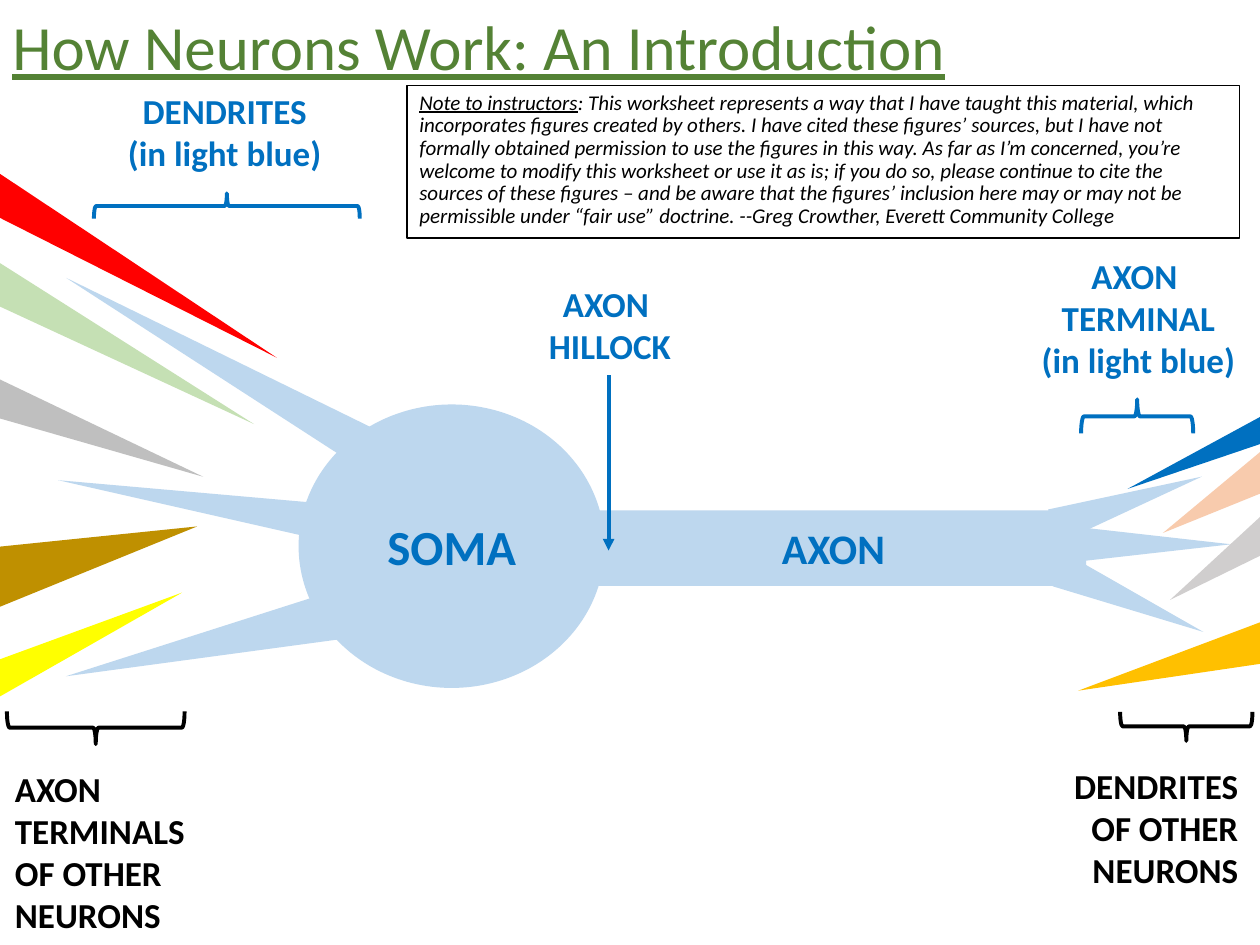
"""Build the worksheet slide that introduces the parts of a neuron."""
from lxml.etree import SubElement
from pptx import Presentation
from pptx.dml.color import RGBColor
from pptx.enum.shapes import MSO_CONNECTOR, MSO_SHAPE
from pptx.enum.text import MSO_ANCHOR, MSO_AUTO_SIZE, PP_ALIGN
from pptx.oxml.ns import qn
from pptx.util import Inches, Pt

SKY = RGBColor(0xBD, 0xD7, 0xEE)
BLUE = RGBColor(0x00, 0x70, 0xC0)
BLACK = RGBColor(0x00, 0x00, 0x00)
GREEN = RGBColor(0x54, 0x82, 0x35)
GOLD = RGBColor(0xFF, 0xC0, 0x00)
SILVER = RGBColor(0xD0, 0xCE, 0xCE)
PEACH = RGBColor(0xF8, 0xCB, 0xAD)
LIME = RGBColor(0xC5, 0xE0, 0xB4)
RED = RGBColor(0xFF, 0x00, 0x00)
GRAY = RGBColor(0xBF, 0xBF, 0xBF)
YELLOW = RGBColor(0xFF, 0xFF, 0x00)
BROWN = RGBColor(0xBF, 0x90, 0x00)
LEFT, MID, RIGHT = PP_ALIGN.LEFT, PP_ALIGN.CENTER, PP_ALIGN.RIGHT

deck = Presentation()
deck.slide_width, deck.slide_height = Inches(10), Inches(7.5)
COL, ROW = deck.slide_width / 100, deck.slide_height / 75
slide = deck.slides.add_slide(deck.slide_layouts[6])
shapes = slide.shapes


def draw(kind, box, turn=0, fill=None, line=None, width=2.25):
    x, y, w, h = box
    shape = shapes.add_shape(kind, int(x * COL), int(y * ROW), int(w * COL), int(h * ROW))
    shape.rotation = turn
    shape.shadow.inherit = False
    if fill is None:
        shape.fill.background()
    else:
        shape.fill.solid()
        shape.fill.fore_color.rgb = fill
    if line is None:
        shape.line.fill.background()
    else:
        shape.line.color.rgb = line
        shape.line.width = Pt(width)
    return shape


def write(para, text, size, color, bold=False, italic=False, under=False):
    run = para.add_run()
    run.text = text
    font = run.font
    font.name, font.size, font.color.rgb = "Calibri", Pt(size), color
    font.bold, font.italic, font.underline = bold, italic, under


bodies = [
    (MSO_SHAPE.OVAL, (23.7, 32.1, 24.3, 22.5), "SOMA", 28),
    (MSO_SHAPE.RECTANGLE, (46.1, 40.5, 40.1, 6), "AXON", 24),
]
for kind, box, name, size in bodies:
    frame = draw(kind, box, fill=SKY).text_frame
    frame.vertical_anchor = MSO_ANCHOR.MIDDLE
    para = frame.paragraphs[0]
    para.alignment = MID
    write(para, name, size, BLUE, bold=True)

spikes = [
    ((15.4, 15.2, 3.2, 27), 299.5, SKY),
    ((14.6, 39.4, 4.1, 23.4), 257.3, SKY),
    ((13.1, 29.7, 2.7, 19.9), 278.9, SKY),
    ((88.1, 33.6, 2.8, 12.4), 71.5, SKY),
    ((88.4, 41.5, 2.8, 12.4), 113.3, SKY),
    ((90.1, 37, 2.8, 12.4), 90, SKY),
    ((92.1, 44, 3.7, 17.3), 255.5, GOLD),
    ((94.7, 29, 2.4, 14), 246.4, BLUE),
    ((95.8, 39, 3.2, 11), 235.6, SILVER),
    ((95, 34.8, 3.1, 9.9), 239.1, PEACH),
    ((7.9, 15.7, 3.2, 24.3), 118.6, LIME),
    ((8.7, 8.1, 3.2, 27), 120.2, RED),
    ((5.6, 24.9, 3.2, 19.1), 110.8, GRAY),
    ((4.2, 41.5, 3.2, 19.1), 65.1, YELLOW),
    ((4.9, 35.3, 4.9, 17.1), 76, BROWN),
]
for box, turn, fill in spikes:
    draw(MSO_SHAPE.ISOSCELES_TRIANGLE, box, turn, fill)

braces = [
    ((88.9, 28.6, 2.7, 8.9), 90, BLUE),
    ((17, 5.8, 2, 21.1), 90, BLUE),
    ((93, 52.4, 2.3, 10.5), 270, BLACK),
    ((6.3, 50.7, 2.6, 14.1), 270, BLACK),
]
for box, turn, line in braces:
    draw(MSO_SHAPE.LEFT_BRACE, box, turn, line=line)

arrow = shapes.add_connector(
    MSO_CONNECTOR.STRAIGHT, int(48.3 * COL), int(29.8 * ROW), int(48.3 * COL), int(43.7 * ROW))
arrow.line.color.rgb = BLUE
arrow.line.width = Pt(2.25)
SubElement(arrow.line._get_or_add_ln(), qn("a:tailEnd"), type="triangle")
SubElement(arrow._element.spPr, qn("a:effectLst"))

labels = [
    ((81.6, 19.7, 17.5, 11.1), MID, BLUE, ["AXON ", "TERMINAL", "(in light blue)"]),
    ((84.1, 60.2, 15.8, 11.1), RIGHT, BLACK, ["DENDRITES ", "OF OTHER ", "NEURONS "]),
    ((9.1, 6.6, 18.1, 7.7), MID, BLUE, ["DENDRITES ", "(in light blue) "]),
    ((0.2, 60.4, 16.3, 14.5), LEFT, BLACK, ["AXON", "TERMINALS", "OF OTHER", "NEURONS"]),
    ((42.5, 21.9, 11.8, 7.7), MID, BLUE, ["AXON ", "HILLOCK"]),
    ((0, 0.1, 100, 7.1), LEFT, GREEN, ["How Neurons Work: An Introduction"]),
]
for (x, y, w, h), align, color, lines in labels:
    title = color == GREEN
    frame = shapes.add_textbox(int(x * COL), int(y * ROW), int(w * COL), int(h * ROW)).text_frame
    frame.word_wrap = title
    frame.auto_size = MSO_AUTO_SIZE.SHAPE_TO_FIT_TEXT
    for i, text in enumerate(lines):
        para = frame.add_paragraph() if i else frame.paragraphs[0]
        para.alignment = align
        write(para, text, 36 if title else 20, color, bold=not title, under=title)

frame = draw(MSO_SHAPE.RECTANGLE, (32.3, 6.8, 66.1, 12.1), line=BLACK, width=0.75).text_frame
frame.word_wrap = True
frame.vertical_anchor = MSO_ANCHOR.TOP
para = frame.paragraphs[0]
para.alignment = LEFT
para.line_spacing = 0.9
para.space_before = Pt(10)
write(para, "Note to instructors", 12, BLACK, italic=True, under=True)
write(para, ": This worksheet represents a way that I have taught this material, which "
      "incorporates figures created by others. I have cited these figures’ sources, but I have "
      "not formally obtained permission to use the figures in this way. As far as I’m concerned, "
      "you’re welcome to modify this worksheet or use it as is; if you do so, please continue to "
      "cite the sources of these figures – and be aware that the figures’ inclusion here may or "
      "may not be permissible under “fair use” doctrine. --Greg Crowther, Everett Community "
      "College", 12, BLACK, italic=True)

deck.save("out.pptx")
